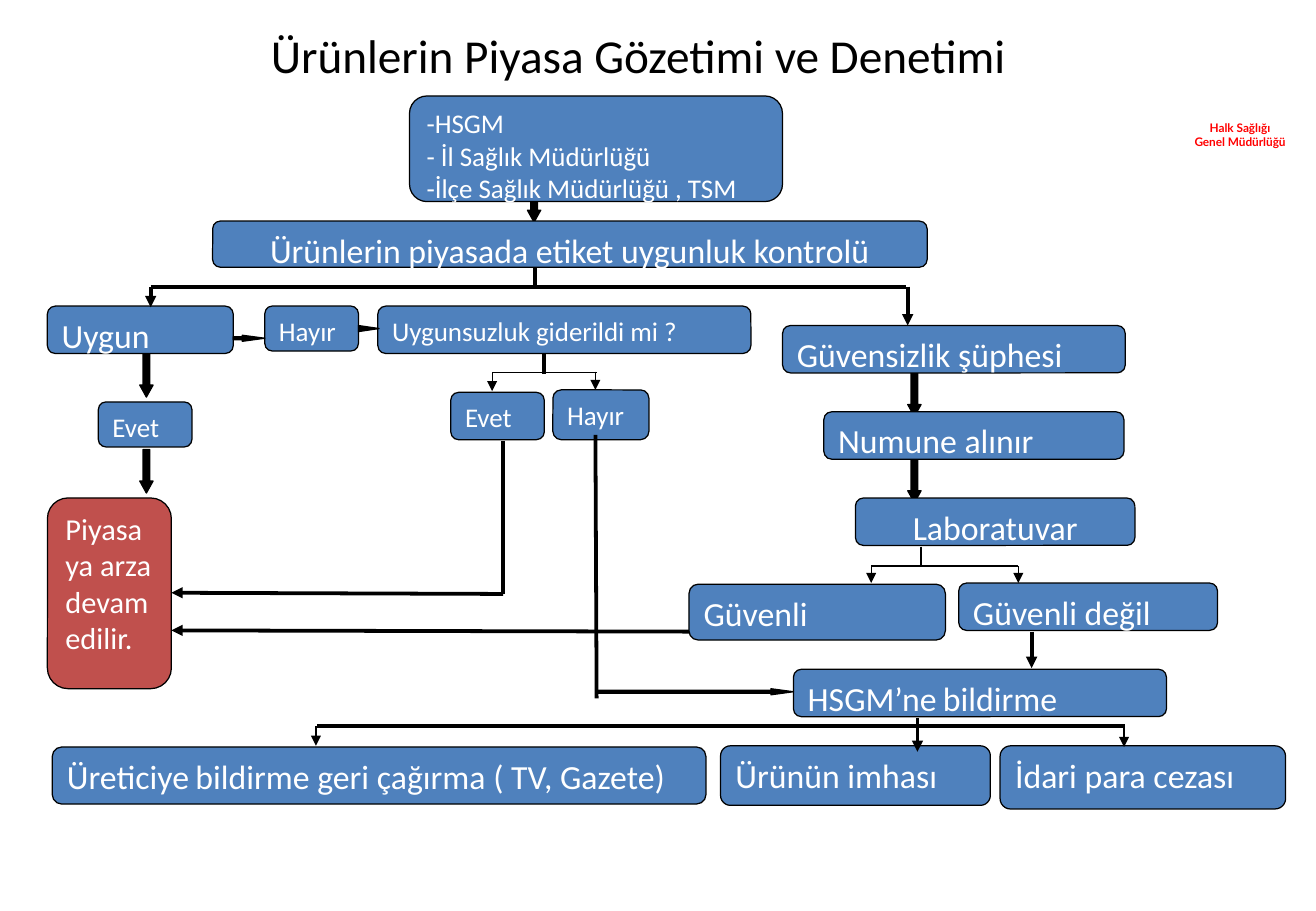
from lxml.etree import SubElement
from pptx import Presentation
from pptx.dml.color import RGBColor
from pptx.enum.shapes import MSO_CONNECTOR, MSO_SHAPE
from pptx.enum.text import MSO_ANCHOR, MSO_AUTO_SIZE, PP_ALIGN
from pptx.oxml.ns import qn
from pptx.util import Inches, Pt

BLUE, RED, BLACK, WHITE = "4F81BD", "C0504D", "000000", "FFFFFF"
LEFT, MID = PP_ALIGN.LEFT, PP_ALIGN.CENTER
DOWN, RIGHT = MSO_SHAPE.DOWN_ARROW, MSO_SHAPE.RIGHT_ARROW

BOXES = [
    (1.75, 1.82, 5.88, 0.38, "Ürünlerin piyasada etiket uygunluk kontrolü", 20, MID),
    (3.11, 2.52, 3.07, 0.39, "Uygunsuzluk giderildi mi ?", 16),
    (0.39, 2.52, 1.53, 0.39, "Uygun", 20),
    (2.18, 2.52, 0.77, 0.37, "Hayır", 16),
    (6.44, 2.68, 2.82, 0.39, "Güvensizlik şüphesi", 20),
    (0.81, 3.31, 0.77, 0.37, "Evet", 16),
    (3.71, 3.23, 0.77, 0.39, "Evet", 16),
    (4.55, 3.21, 0.79, 0.41, "Hayır", 16),
    (6.78, 3.39, 2.47, 0.39, "Numune alınır", 20),
    (7.04, 4.1, 2.3, 0.39, "Laboratuvar", 20, MID),
    (0.39, 4.1, 1.02, 1.57, "Piyasaya arza devam edilir.", 18, LEFT, RED),
    (5.67, 4.81, 2.11, 0.46, "Güvenli", 20),
    (7.89, 4.8, 2.13, 0.39, "Güvenli değil", 20),
    (6.53, 5.51, 3.07, 0.39, "HSGM’ne| |bildirme", 20),
    (0.43, 6.15, 5.38, 0.47,
     "Üreticiye| |bildirme geri çağırma ( TV, Gazete)", 20),
    (5.93, 6.14, 2.22, 0.49, "Ürünün imhası", 20),
    (8.23, 6.14, 2.35, 0.52, "İdari para cezası", 20),
]
DROPS = [(4.34, 1.47), (1.15, 2.91), (1.15, 3.7), (7.47, 3.07), (7.47, 3.78)]
SIDES = [(4.91, 5.67, 1.62), (2.95, 2.68, 0.17), (1.92, 2.76, 0.26)]
THICK = [
    (4.4, 2.2, 4.4, 2.38), (1.24, 2.36, 7.46, 2.36),
    (4.48, 2.91, 4.48, 3.08), (4.14, 3.63, 4.14, 4.89),
    (4.9, 3.58, 4.91, 5.75), (2.61, 5.98, 9.26, 5.98),
]
THIN = [
    (4.05, 3.07, 4.91, 3.07), (7.58, 4.5, 7.58, 4.66),
    (7.17, 4.66, 8.38, 4.66),
]
THICK_TIPS = [
    (1.24, 2.36, 1.24, 2.53), (7.47, 2.36, 7.47, 2.68),
    (4.14, 4.89, 1.41, 4.88), (5.67, 5.2, 1.41, 5.19),
    (8.49, 5.2, 8.49, 5.5), (7.55, 5.91, 7.55, 6.19),
]
THIN_TIPS = [
    (4.05, 3.07, 4.05, 3.22), (4.9, 3.06, 4.9, 3.21),
    (7.17, 4.66, 7.17, 4.8), (8.38, 4.66, 8.38, 4.8),
    (2.6, 5.98, 2.6, 6.14), (9.25, 5.98, 9.25, 6.15),
]


def color(code):
    """Turn a hex string into a colour."""
    return RGBColor.from_string(code)


def style(font, size, code, face="Calibri"):
    """Set size, colour and face of a font."""
    font.size = Pt(size)
    font.color.rgb = color(code)
    font.name = face


def shape(slide, kind, x, y, w, h, fill):
    """Add a filled shape with a thin black line."""
    item = slide.shapes.add_shape(kind, *map(Inches, (x, y, w, h)))
    item.shadow.inherit = False
    item.fill.solid()
    item.fill.fore_color.rgb = color(fill)
    item.line.color.rgb = color(BLACK)
    item.line.width = Pt(0.75)
    return item


def box(slide, x, y, w, h, text, size, align=LEFT, fill=BLUE, after=10):
    """Add a rounded box; parts between bars are small and yellow."""
    item = shape(slide, MSO_SHAPE.ROUNDED_RECTANGLE, x, y, w, h, fill)
    frame = item.text_frame
    frame.word_wrap = True
    frame.vertical_anchor = MSO_ANCHOR.TOP
    for n, line in enumerate(text.split("\n")):
        para = frame.add_paragraph() if n else frame.paragraphs[0]
        para.alignment = align
        para.space_after = Pt(after)
        style(para.font, size, WHITE)
        for k, part in enumerate(line.split("|")):
            run = para.add_run()
            run.text = part
            if k % 2:
                style(run.font, 16, "FFFF00")


def arrow(slide, kind, x, y, w, h, head):
    """Add a black block arrow with the given head length."""
    item = shape(slide, kind, x, y, w, h, BLACK)
    item.adjustments[0] = 0.5
    item.adjustments[1] = head


def link(slide, ends, width, tip):
    """Add a straight black line, with or without an arrowhead."""
    item = slide.shapes.add_connector(MSO_CONNECTOR.STRAIGHT, *map(Inches, ends))
    item.line.color.rgb = color(BLACK)
    item.line.width = Pt(width)
    if tip:
        SubElement(item.line._get_or_add_ln(), qn("a:tailEnd"), type="triangle")
    SubElement(item._element.spPr, qn("a:effectLst"))


def label(slide, x, y, w, h, lines, size, code, face="Calibri", bold=False, pad=0.0):
    """Add centred plain text."""
    item = slide.shapes.add_textbox(*map(Inches, (x, y, w, h)))
    frame = item.text_frame
    frame.word_wrap = True
    frame.auto_size = MSO_AUTO_SIZE.SHAPE_TO_FIT_TEXT
    frame.margin_left = frame.margin_right = Inches(2 * pad)
    frame.margin_top = frame.margin_bottom = Inches(pad)
    frame.text = "\n".join(lines)
    for para in frame.paragraphs:
        para.alignment = MID
        style(para.font, size, code, face)
        para.font.bold = bold


def main():
    """Build the slide and save it."""
    deck = Presentation()
    deck.slide_width, deck.slide_height = Inches(10.83), Inches(7.5)
    slide = deck.slides.add_slide(deck.slide_layouts[6])
    label(slide, 9.64, 0.99, 1.13, 0.24, ["Halk Sağlığı", "Genel Müdürlüğü"],
          7, "FF0000", "Lato", True)
    label(slide, 1.24, 0.17, 8.02, 0.57,
          ["Ürünlerin Piyasa Gözetimi ve Denetimi"], 28, BLACK, pad=0.05)
    for x, y in DROPS:
        arrow(slide, DOWN, x, y, 0.11, 0.36, 0.9)
    box(slide, 3.37, 0.79, 3.07, 0.87,
        "-HSGM\n- İl Sağlık Müdürlüğü\n-İlçe Sağlık Müdürlüğü , TSM", 16, after=0)
    for item in BOXES:
        box(slide, *item)
    for x, y, w in SIDES:
        arrow(slide, RIGHT, x, y, w, 0.05, 3.7)
    for group, width, tip in ((THICK, 2.25, False), (THIN, 0.75, False),
                              (THICK_TIPS, 2.25, True), (THIN_TIPS, 0.75, True)):
        for ends in group:
            link(slide, ends, width, tip)
    deck.save("out.pptx")


if __name__ == "__main__":
    main()
